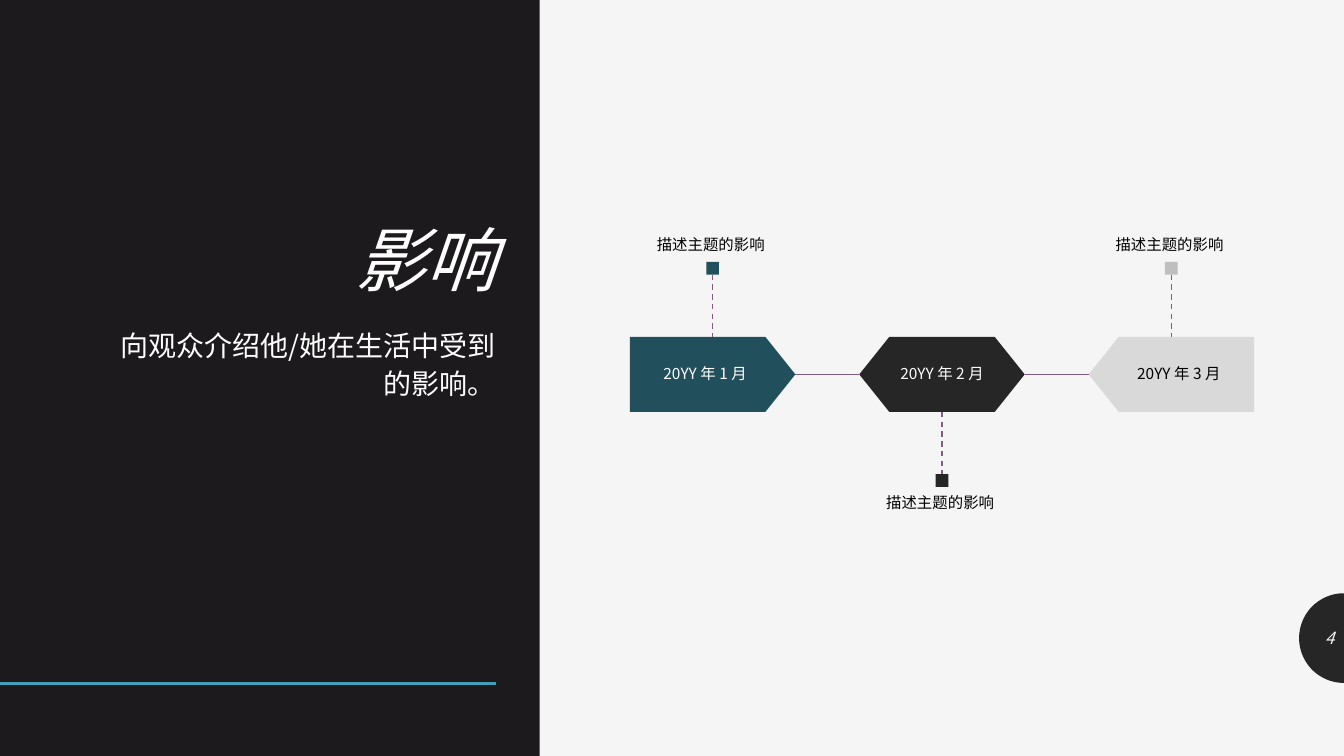
"""Build the slide on influences: a dark title panel beside a three-step timeline."""
import math

import lxml.etree
import pptx
import pptx.dml.color
import pptx.enum.dml
import pptx.enum.shapes
import pptx.enum.text
import pptx.oxml.ns
import pptx.util

Cm = pptx.util.Cm
SHAPES = pptx.enum.shapes.MSO_SHAPE
ALIGN = pptx.enum.text.PP_ALIGN
ANCHOR = pptx.enum.text.MSO_ANCHOR

FONT = "Noto Sans CJK SC"
COLOURS = {
    "background": "F5F5F5",
    "panel": "1D1A1D",
    "accent": "439EB7",
    "teal": "224F5C",
    "charcoal": "262626",
    "light": "D9D9D9",
    "grey": "BFBFBF",
    "plum": "835B82",
    "white": "FFFFFF",
    "black": "000000",
}
WIDTH, HEIGHT = 33.87, 19.05
PANEL_WIDTH = 13.6
FIRST_CENTRE, PITCH = 17.96, 5.78
STEP_TOP, STEP_WIDTH, STEP_HEIGHT = 8.49, 4.17, 1.89
STEP_MIDDLE = STEP_TOP + STEP_HEIGHT / 2
STEM, MARKER = 1.57, 0.32
LABEL_HEIGHT = 5.03
LABEL = "描述主题的影响 "
STEPS = [
    ("20YY 年 1 月", SHAPES.PENTAGON, 0, "teal", "teal", "white", -0.19, True),
    ("20YY 年 2 月", SHAPES.HEXAGON, 0, "charcoal", "charcoal", "white", 0, False),
    ("20YY 年 3 月", SHAPES.PENTAGON, 180, "light", "grey", "black", 0.19, True),
]


def rgb(name):
    """Return the named colour."""
    return pptx.dml.color.RGBColor.from_string(COLOURS[name])


def paint(shape, colour):
    """Give a shape a flat fill with no outline or shadow."""
    shape.shadow.inherit = False
    shape.fill.solid()
    shape.fill.fore_color.rgb = rgb(colour)
    shape.line.fill.background()


def add_block(slide, kind, left, top, width, height, colour):
    """Add a flat preset shape."""
    shape = slide.shapes.add_shape(kind, Cm(left), Cm(top), Cm(width), Cm(height))
    paint(shape, colour)
    return shape


def add_line(slide, start, end, colour, weight, dashed=False):
    """Add a straight line between two points."""
    line = slide.shapes.add_connector(
        pptx.enum.shapes.MSO_CONNECTOR.STRAIGHT, *map(Cm, start + end))
    line.line.color.rgb = rgb(colour)
    line.line.width = pptx.util.Pt(weight)
    if dashed:
        line.line.dash_style = pptx.enum.dml.MSO_LINE.DASH
    lxml.etree.SubElement(line._element.spPr, pptx.oxml.ns.qn("a:effectLst"))


def add_text(slide, text, box, size, colour, align, anchor,
             spacing=0.9, margins=(0.25, 0.13), italic=False):
    """Add a wrapped one-paragraph text box."""
    frame = slide.shapes.add_textbox(*map(Cm, box)).text_frame
    frame.word_wrap = True
    frame.vertical_anchor = anchor
    frame.margin_left = frame.margin_right = Cm(margins[0])
    frame.margin_top = frame.margin_bottom = Cm(margins[1])
    paragraph = frame.paragraphs[0]
    paragraph.text = text
    paragraph.alignment = align
    paragraph.line_spacing = spacing
    font = paragraph.font
    font.name = FONT
    font.size = pptx.util.Pt(size)
    font.italic = italic
    font.color.rgb = rgb(colour)
    east_asian = lxml.etree.SubElement(font._element, pptx.oxml.ns.qn("a:ea"))
    east_asian.set("typeface", FONT)
    return paragraph


def add_page_number(slide, number):
    """Add the half disc at the right edge with the page number."""
    centre, radius = 16.08, 1.13
    angles = [math.pi * (0.5 + step / 48) for step in range(49)]
    points = [(Cm(WIDTH + radius * math.cos(angle)), Cm(centre - radius * math.sin(angle)))
              for angle in angles]
    builder = slide.shapes.build_freeform(*points[0])
    builder.add_line_segments(points[1:], close=True)
    paint(builder.convert_to_shape(), "charcoal")
    add_text(slide, number, (WIDTH - radius, 15.57, radius, 1.02), 12, "background",
             ALIGN.RIGHT, ANCHOR.MIDDLE, spacing=1, italic=True)


def add_panel(slide):
    """Add the dark panel with title, introduction and accent line."""
    add_block(slide, SHAPES.RECTANGLE, 0, 0, PANEL_WIDTH, HEIGHT, "panel")
    add_line(slide, (0, 17.22), (12.5, 17.22), "accent", 2)
    add_text(slide, "影响", (2.11, 1.55, 10.64, 6.17), 50, "white",
             ALIGN.RIGHT, ANCHOR.BOTTOM, italic=True)
    introduction = add_text(
        slide, "向观众介绍他/她在生活中受到的影响。", (2.11, 8.05, 10.64, 7.92), 20, "white",
        ALIGN.RIGHT, ANCHOR.TOP, spacing=1.12)
    introduction.space_before = pptx.util.Pt(9)


def add_step(slide, centre, step):
    """Add one dated step with its stem, marker and label above or below."""
    date, kind, rotation, colour, marker_colour, text_colour, shift, above = step
    left = centre - STEP_WIDTH / 2
    shape = add_block(slide, kind, left, STEP_TOP, STEP_WIDTH, STEP_HEIGHT, colour)
    shape.adjustments[0] = 0.4
    shape.rotation = rotation
    add_text(slide, date, (centre + shift - 1.89, STEP_TOP, 3.78, STEP_HEIGHT), 11,
             text_colour, ALIGN.CENTER, ANCHOR.MIDDLE, margins=(0.23, 0.23))
    if above:
        stem_top = STEP_TOP - STEM
        marker_top = stem_top - MARKER
        label_top, anchor = marker_top - LABEL_HEIGHT, ANCHOR.BOTTOM
    else:
        stem_top = STEP_TOP + STEP_HEIGHT
        marker_top = stem_top + STEM
        label_top, anchor = marker_top + MARKER, ANCHOR.TOP
    add_line(slide, (centre, stem_top), (centre, stem_top + STEM), "plum", 1, dashed=True)
    add_block(slide, SHAPES.RECTANGLE, centre - MARKER / 2, marker_top, MARKER, MARKER,
              marker_colour)
    add_text(slide, LABEL, (centre - PITCH / 2, label_top, PITCH, LABEL_HEIGHT), 11, "black",
             ALIGN.CENTER, anchor, margins=(0, 0.28))


def add_timeline(slide):
    """Add the steps and the links between them."""
    for index, step in enumerate(STEPS):
        centre = FIRST_CENTRE + index * PITCH
        add_step(slide, centre, step)
        if index:
            add_line(slide, (centre - PITCH + STEP_WIDTH / 2, STEP_MIDDLE),
                     (centre - STEP_WIDTH / 2, STEP_MIDDLE), "plum", 0.5)


def main():
    """Build and save the presentation."""
    presentation = pptx.Presentation()
    presentation.slide_width, presentation.slide_height = Cm(WIDTH), Cm(HEIGHT)
    slide = presentation.slides.add_slide(presentation.slide_layouts[6])
    slide.background.fill.solid()
    slide.background.fill.fore_color.rgb = rgb("background")
    add_panel(slide)
    add_timeline(slide)
    add_page_number(slide, "4")
    presentation.save("out.pptx")


if __name__ == "__main__":
    main()
